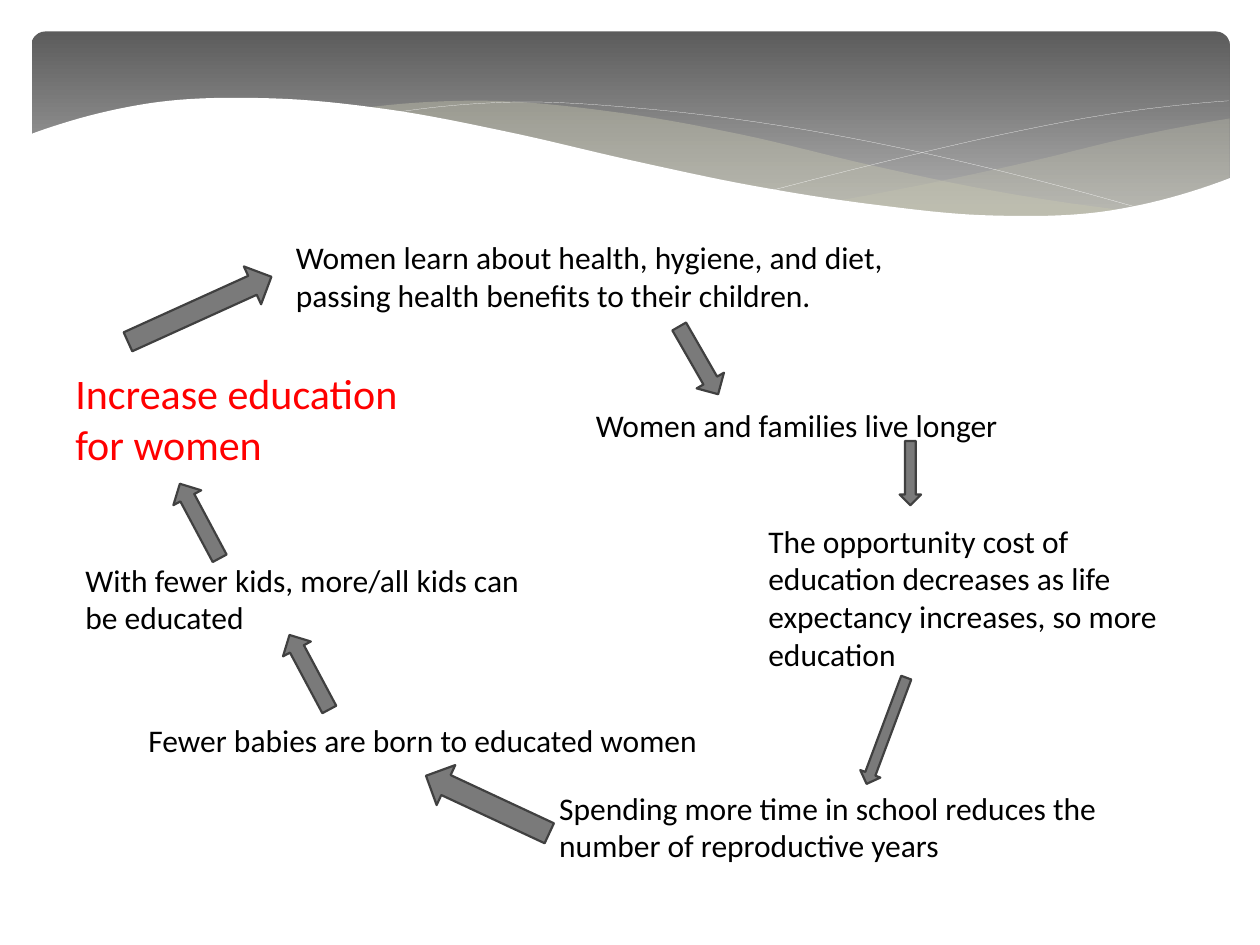
import pptx
import pptx.util
import pptx.dml.color
import pptx.enum.shapes
import pptx.enum.text
import pptx.oxml.ns
from lxml import etree

Inches = pptx.util.Inches
Pt = pptx.util.Pt
SHAPES = pptx.enum.shapes.MSO_SHAPE
WHITE, BLACK, RED = "FFFFFF", "000000", "FF0000"
WAVE_BEIGE, ARROW_GREY, ARROW_EDGE = "C8C8B1", "7A7A7A", "404040"
SAMPLES_PER_SPAN = 12


def color(hex_string):
    return pptx.dml.color.RGBColor.from_string(hex_string)


def smooth_curve(left, right, heights):
    """Points of a Catmull-Rom curve through heights at equal steps of x."""
    first, second, third = heights[:3]
    before_start = 3 * first - 3 * second + third
    third, second, last = heights[-3:]
    after_end = 3 * last - 3 * second + third
    knots = [before_start, *heights, after_end]
    span_count = len(heights) - 1
    points = []
    for index in range(span_count * SAMPLES_PER_SPAN + 1):
        span = min(index // SAMPLES_PER_SPAN, span_count - 1)
        t = index / SAMPLES_PER_SPAN - span
        a, b, c, d = knots[span:span + 4]
        y = b + t * ((c - a) + t * ((2 * a - 5 * b + 4 * c - d) + t * (3 * b - a - 3 * c + d))) / 2
        x = left + (right - left) * index / (span_count * SAMPLES_PER_SPAN)
        points.append((x, y))
    return points


presentation = pptx.Presentation()
presentation.slide_width = Inches(10)
presentation.slide_height = Inches(7.5)
slide = presentation.slides.add_slide(presentation.slide_layouts[6])

# Gradient header
header = slide.shapes.add_shape(
    SHAPES.ROUNDED_RECTANGLE, Inches(0.25), Inches(0.25), Inches(9.51), Inches(1.56))
header.adjustments[0] = 0.07
header.shadow.inherit = False
header.line.fill.background()
header.fill.gradient()
header.fill.gradient_angle = 270
for stop, position, shade in zip(header.fill.gradient_stops, (0, 0.9), ("5C5C5C", "AFAFAF")):
    stop.position = position
    stop.color.rgb = color(shade)

# Curves of the header; a band runs along its upper edge and back along its lower edge
right_wave = (smooth_curve(6.61, 9.76, [1.6, 1.45, 1.28, 1.09, 0.94])
              + smooth_curve(6.61, 9.76, [1.6, 1.69, 1.72, 1.65, 1.41])[::-1])
left_wave = (smooth_curve(2.86, 8.93, [0.86, 0.8, 0.89, 1.07, 1.31, 1.52, 1.67])
             + smooth_curve(2.86, 8.93, [0.86, 1.02, 1.25, 1.48, 1.65, 1.73, 1.67])[::-1])
falling_line = smooth_curve(3.09, 9.07, [0.9, 0.81, 0.86, 0.98, 1.16, 1.39, 1.66])
rising_line = smooth_curve(6.13, 9.75, [1.51, 1.28, 1.07, 0.9, 0.8])
header_cutout = smooth_curve(
    0.23, 9.77, [1.07, 0.82, 0.78, 0.87, 1.05, 1.27, 1.47, 1.62, 1.71, 1.67, 1.41])
header_cutout += [(9.77, 2.24), (0.23, 2.24)]

# Draw them from back to front: points, fill, opacity in percent; no fill means a hairline
curves = [
    (right_wave, WAVE_BEIGE, 29),
    (left_wave, WAVE_BEIGE, 40),
    (falling_line, None, 100),
    (rising_line, None, 100),
    (header_cutout, WHITE, 100),
]
for points, fill, opacity in curves:
    corners = [(Inches(x), Inches(y)) for x, y in points]
    builder = slide.shapes.build_freeform(*corners[0])
    builder.add_line_segments(corners[1:], close=fill is not None)
    shape = builder.convert_to_shape()
    shape.shadow.inherit = False
    if fill is None:
        shape.fill.background()
        shape.line.color.rgb = color(WHITE)
        shape.line.width = Pt(0.1)
        continue
    shape.line.fill.background()
    shape.fill.solid()
    shape.fill.fore_color.rgb = color(fill)
    if opacity < 100:
        fill_color = shape.element.spPr.find(".//" + pptx.oxml.ns.qn("a:srgbClr"))
        etree.SubElement(fill_color, pptx.oxml.ns.qn("a:alpha"), val=str(opacity * 1000))

# Steps of the cycle, clockwise: text, left, top, width, height, wrap
steps = [
    ("Increase education for women", 0.5, 2.87, 3.17, 0.91, True),
    ("Women learn about health, hygiene, and diet,\npassing health benefits to their children.",
     2.25, 1.84, 5.1, 0.71, False),
    ("Women and families live longer", 4.63, 3.17, 3.52, 0.4, False),
    ("The opportunity cost of education decreases as life expectancy increases, "
     "so more education", 6, 4.09, 3.54, 1.31, True),
    ("Spending more time in school reduces the number of reproductive years",
     4.34, 6.21, 4.67, 0.71, True),
    ("Fewer babies are born to educated women", 1.08, 5.67, 4.78, 0.4, False),
    ("With fewer kids, more/all kids can\nbe educated", 0.58, 4.4, 3.76, 0.71, False),
]
for number, (text, left, top, width, height, wrap) in enumerate(steps):
    # The first step starts the cycle and stands out
    size, text_color = (24, RED) if number == 0 else (18, BLACK)
    box = slide.shapes.add_textbox(Inches(left), Inches(top), Inches(width), Inches(height))
    text_frame = box.text_frame
    text_frame.text = text
    text_frame.word_wrap = wrap
    text_frame.auto_size = pptx.enum.text.MSO_AUTO_SIZE.SHAPE_TO_FIT_TEXT
    for paragraph in text_frame.paragraphs:
        for run in paragraph.runs:
            run.font.name = "Calibri"
            run.font.size = Pt(size)
            run.font.color.rgb = color(text_color)

# Arrows between the steps, clockwise: kind, left, top, width, height, rotation
arrows = [
    (SHAPES.RIGHT_ARROW, 0.96, 2.29, 1.25, 0.33, 335.6),
    (SHAPES.DOWN_ARROW, 5.42, 2.55, 0.25, 0.62, 330.1),
    (SHAPES.DOWN_ARROW, 7.14, 3.5, 0.17, 0.51, 0),
    (SHAPES.DOWN_ARROW, 6.95, 5.35, 0.17, 0.9, 20.5),
    (SHAPES.RIGHT_ARROW, 3.33, 6.21, 1.08, 0.35, 205),
    (SHAPES.DOWN_ARROW, 2.33, 5, 0.25, 0.67, 151.9),
    (SHAPES.DOWN_ARROW, 1.46, 3.8, 0.25, 0.67, 151.9),
]
for kind, left, top, width, height, rotation in arrows:
    arrow = slide.shapes.add_shape(
        kind, Inches(left), Inches(top), Inches(width), Inches(height))
    arrow.rotation = rotation
    arrow.shadow.inherit = False
    arrow.fill.solid()
    arrow.fill.fore_color.rgb = color(ARROW_GREY)
    arrow.line.color.rgb = color(ARROW_EDGE)
    arrow.line.width = Pt(1.25)

presentation.save("out.pptx")
